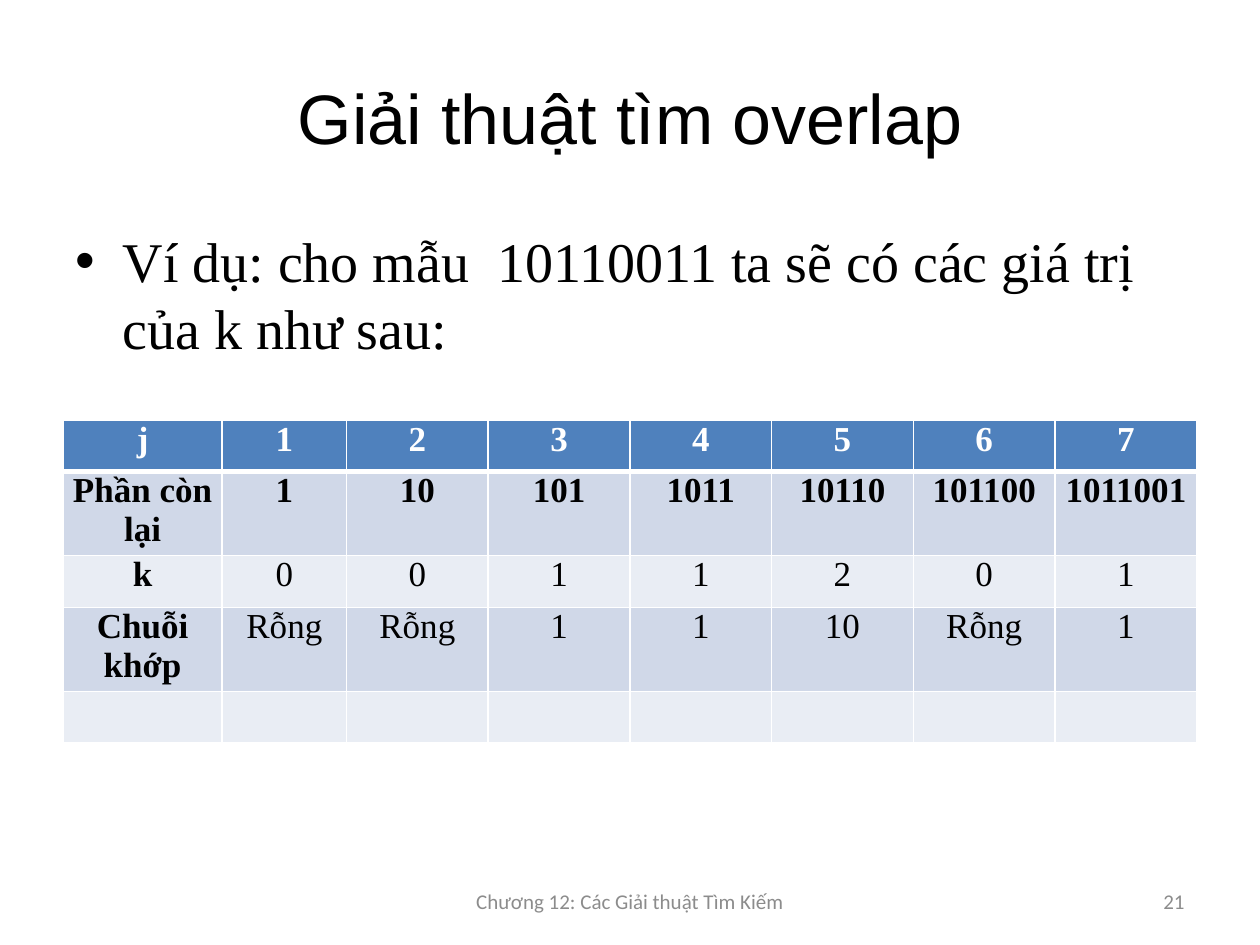
from dataclasses import dataclass

from lxml import etree
from pptx import Presentation
from pptx.dml.color import RGBColor
from pptx.enum import text
from pptx.oxml import ns
from pptx.util import Pt


@dataclass(frozen=True)
class Theme:
    black: str = "000000"
    white: str = "FFFFFF"
    gray: str = "8C8C8C"
    header: str = "4F81BD"
    band_dark: str = "D0D8E8"
    band_light: str = "E9EDF4"
    title_font: str = "Arial"
    body_font: str = "Times New Roman"
    footer_font: str = "Calibri"
    title_size: int = 40
    body_size: int = 32
    table_size: int = 20
    footer_size: int = 12


THEME = Theme()
CENTER = text.PP_ALIGN.CENTER
MIDDLE = text.MSO_ANCHOR.MIDDLE

OVERLAP_ROWS = [
    ["j", "1", "2", "3", "4", "5", "6", "7"],
    ["Phần còn lại", "1", "10", "101", "1011", "10110", "101100", "1011001"],
    ["k", "0", "0", "1", "1", "2", "0", "1"],
    ["Chuỗi khớp", "Rỗng", "Rỗng", "1", "1", "10", "Rỗng", "1"],
    [""] * 8,
]
COLUMN_WIDTHS = [91, 71] + [81] * 6
ROW_HEIGHT = 29.5


def format_para(para, font, size, color, align, bold=False):
    para.alignment = align
    for span in para.runs:
        span.font.name = font
        span.font.size = Pt(size)
        span.font.bold = bold
        span.font.color.rgb = RGBColor.from_string(color)


def set_title(page, wording):
    title = page.shapes.title
    title.left, title.top, title.width, title.height = Pt(36), Pt(21.6), Pt(648), Pt(90)
    title.text_frame.text = wording
    title.text_frame.vertical_anchor = MIDDLE
    format_para(title.text_frame.paragraphs[0], THEME.title_font, THEME.title_size,
                THEME.black, CENTER)


def add_text(page, wording, place, font, size, color, align, anchor=MIDDLE):
    box = page.shapes.add_textbox(*(Pt(length) for length in place))
    box.text_frame.word_wrap = True
    box.text_frame.vertical_anchor = anchor
    box.text_frame.text = wording
    para = box.text_frame.paragraphs[0]
    format_para(para, font, size, color, align)
    return para


def add_bullet(para, indent):
    props = para._p.get_or_add_pPr()
    props.set("marL", str(Pt(indent)))
    props.set("indent", str(-Pt(indent)))
    etree.SubElement(props, ns.qn("a:buFont")).set("typeface", "Arial")
    etree.SubElement(props, ns.qn("a:buChar")).set("char", "•")


def set_border(cell, side, width):
    props = cell._tc.get_or_add_tcPr()
    line = etree.SubElement(props, ns.qn(f"a:ln{side}"), w=str(Pt(width)))
    fill = etree.SubElement(line, ns.qn("a:solidFill"))
    etree.SubElement(fill, ns.qn("a:srgbClr"), val=THEME.white)


def format_cell(cell, wording, row, column):
    # White grid with a thicker rule under the header
    for side in "LRTB":
        under_header = (row, side) in [(0, "B"), (1, "T")]
        set_border(cell, side, 3 if under_header else 1)

    band = THEME.band_dark if row % 2 else THEME.band_light
    cell.fill.solid()
    cell.fill.fore_color.rgb = RGBColor.from_string(band if row else THEME.header)

    if wording:
        cell.margin_left = cell.margin_right = Pt(5)
        cell.margin_top = cell.margin_bottom = 0
        cell.text_frame.text = wording
        para = cell.text_frame.paragraphs[0]
        para.space_before = para.space_after = Pt(3)
        format_para(para, THEME.body_font, THEME.table_size,
                    THEME.black if row else THEME.white, CENTER,
                    bold=row < 2 or column == 0)


def add_overlap_table(page):
    count = len(OVERLAP_ROWS)
    frame = page.shapes.add_table(count, len(COLUMN_WIDTHS), Pt(36), Pt(240),
                                  Pt(sum(COLUMN_WIDTHS)), Pt(ROW_HEIGHT * count))
    table = frame.table
    for column, width in zip(table.columns, COLUMN_WIDTHS):
        column.width = Pt(width)
    for row, wordings in enumerate(OVERLAP_ROWS):
        table.rows[row].height = Pt(ROW_HEIGHT)
        for column, wording in enumerate(wordings):
            format_cell(table.cell(row, column), wording, row, column)


def main():
    deck = Presentation()
    deck.slide_width, deck.slide_height = Pt(720), Pt(540)
    page = deck.slides.add_slide(deck.slide_layouts.get_by_name("Title Only"))

    # Title and example
    set_title(page, "Giải thuật tìm overlap")
    example = add_text(page, "Ví dụ: cho mẫu  10110011 ta sẽ có các giá trị của k như sau:",
                       (36, 126, 648, 356.4), THEME.body_font, THEME.body_size,
                       THEME.black, text.PP_ALIGN.LEFT, text.MSO_ANCHOR.TOP)
    example.space_before = Pt(6.4)
    add_bullet(example, 27)

    # Footer and page number
    footer_style = (THEME.footer_font, THEME.footer_size, THEME.gray)
    add_text(page, "Chương 12: Các Giải thuật Tìm Kiếm", (246, 500.5, 228, 28.75),
             *footer_style, CENTER)
    add_text(page, "21", (516, 500.5, 168, 28.75), *footer_style, text.PP_ALIGN.RIGHT)

    # Overlap values
    add_overlap_table(page)

    deck.save("out.pptx")


if __name__ == "__main__":
    main()
